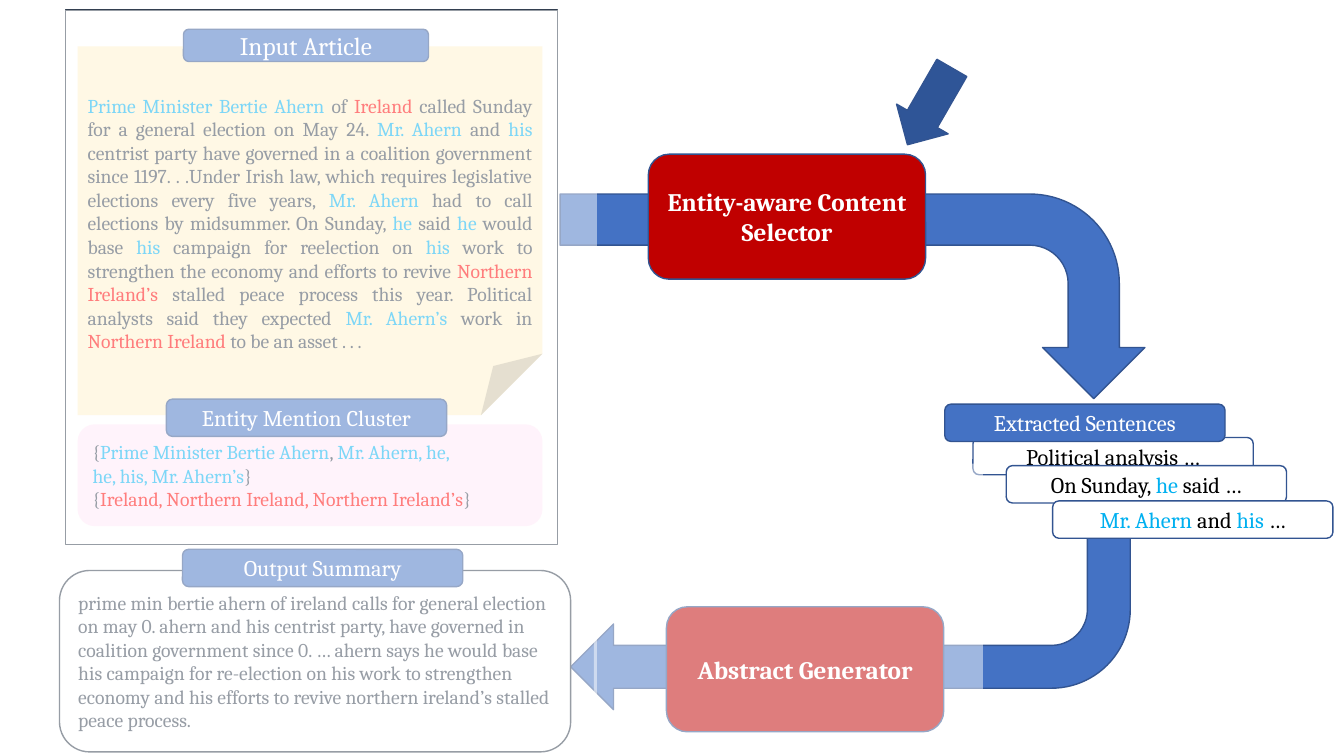
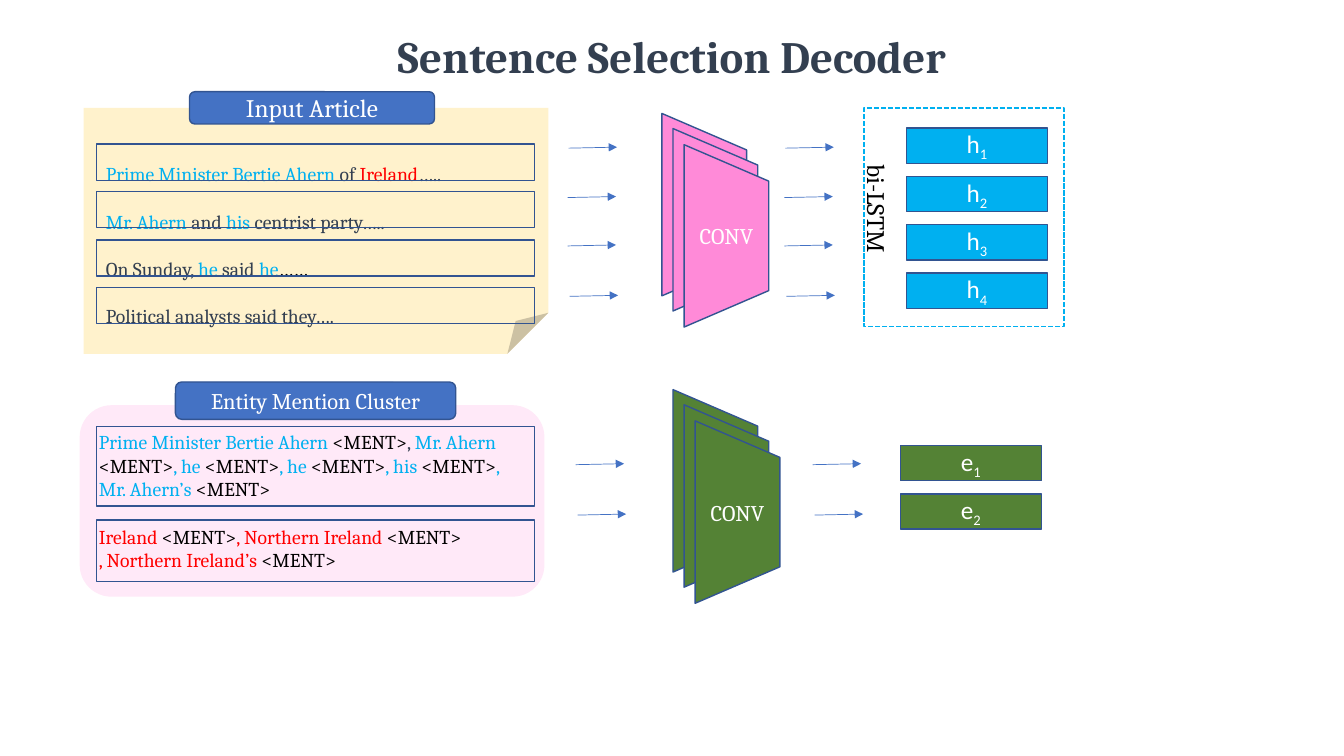
from dataclasses import dataclass, replace
from functools import partial
from typing import NamedTuple, Optional, Union

import pptx
import pptx.dml.color
import pptx.enum.dml
import pptx.enum.shapes
import pptx.enum.text
import pptx.oxml
import pptx.oxml.ns
import pptx.util
from lxml import etree

EMU_PER_PX = 9144  # 100 px to the inch

# Shared colours
WHITE, BLACK, SLATE = "FFFFFF", "000000", "333F50"
BLUE, OUTLINE, NAVY = "4472C4", "325491", "2F5597"
CYAN, RED, CRIMSON = "00B0F0", "FF0000", "C00000"
CREAM, BLUSH, PINK, GREEN = "FFF2CC", "FFE9F8", "FF8AD8", "548235"

KIND = pptx.enum.shapes.MSO_SHAPE
ALIGN = pptx.enum.text.PP_ALIGN
ANCHOR = pptx.enum.text.MSO_ANCHOR


class Box(NamedTuple):
    left: int
    top: int
    width: int
    height: int


class Run(NamedTuple):
    text: str
    color: Optional[str] = None
    baseline: int = 0


Words = tuple[Union[str, Run], ...]


@dataclass(frozen=True)
class TextStyle:
    size: int
    color: str = SLATE
    font: str = "Cambria"
    bold: bool = False
    align: ALIGN = ALIGN.LEFT
    anchor: ANCHOR = ANCHOR.MIDDLE
    gap: int = 0  # points before every paragraph but the first
    inset_left: int = 10
    inset_top: int = 5


@dataclass(frozen=True)
class Outline:
    color: str = OUTLINE
    width: float = 1
    dashed: bool = False


EDGE = Outline()
BODY = TextStyle(14)
LABEL = TextStyle(16, WHITE, align=ALIGN.CENTER)
ARTICLE_LABEL = replace(LABEL, size=18)
CARD = replace(LABEL, color=BLACK)
STAGE = replace(ARTICLE_LABEL, bold=True)
STATE = replace(ARTICLE_LABEL, font="Calibri")

# Mentions of the two entities, the tag that follows each, and a line break
person = partial(Run, color=CYAN)
place = partial(Run, color=RED)
MENT = Run("<MENT>", BLACK)
BREAK = "\n"


def px(length: int) -> pptx.util.Emu:
    return pptx.util.Emu(length * EMU_PER_PX)


def rgb(color: str) -> pptx.dml.color.RGBColor:
    return pptx.dml.color.RGBColor.from_string(color)


def write(frame, paragraphs: list[Words], style: TextStyle) -> None:
    frame.word_wrap = True
    frame.vertical_anchor = style.anchor
    frame.margin_left, frame.margin_top = px(style.inset_left), px(style.inset_top)
    for index, words in enumerate(paragraphs):
        paragraph = frame.add_paragraph() if index else frame.paragraphs[0]
        paragraph.alignment = style.align
        if index and style.gap:
            paragraph.space_before = pptx.util.Pt(style.gap)
        font = paragraph.font
        font.name, font.size = style.font, pptx.util.Pt(style.size)
        font.bold, font.color.rgb = style.bold, rgb(style.color)
        for word in words:
            if word == BREAK:
                paragraph.add_line_break()
                continue
            part = Run(word) if isinstance(word, str) else word
            run = paragraph.add_run()
            run.text = part.text
            if part.color:
                run.font.color.rgb = rgb(part.color)
            if part.baseline:
                run.font._element.set("baseline", str(part.baseline * 1000))


def draw(slide, kind: KIND, box: Box, fill: Optional[str] = None,
         outline: Optional[Outline] = EDGE, paragraphs: Optional[list[Words]] = None,
         style: TextStyle = BODY, rotation: int = 0):
    shape = slide.shapes.add_shape(kind, *map(px, box))
    shape.shadow.inherit = False
    shape.rotation = rotation
    if fill:
        shape.fill.solid()
        shape.fill.fore_color.rgb = rgb(fill)
    else:
        shape.fill.background()
    if outline:
        shape.line.color.rgb = rgb(outline.color)
        shape.line.width = pptx.util.Pt(outline.width)
        if outline.dashed:
            shape.line.dash_style = pptx.enum.dml.MSO_LINE.SQUARE_DOT
    else:
        shape.line.fill.background()
    if paragraphs:
        write(shape.text_frame, paragraphs, style)
    return shape


def text_box(slide, box: Box, text: str, style: TextStyle, rotation: int = 0) -> None:
    shape = slide.shapes.add_textbox(*map(px, box))
    shape.rotation = rotation
    write(shape.text_frame, [(text,)], style)


# Parts that both slides use
def article_label(slide, left: int, top: int) -> None:
    draw(slide, KIND.ROUNDED_RECTANGLE, Box(left, top, 243, 32), BLUE,
         paragraphs=[("Input Article",)], style=ARTICLE_LABEL)


def strip(slide, left: int, top: int, words: Words, fill: str = BLUE,
          style: TextStyle = LABEL) -> None:
    draw(slide, KIND.ROUNDED_RECTANGLE, Box(left, top, 278, 37), fill,
         paragraphs=[words], style=style)


def sheet(slide, box: Box, paragraphs: list[Words], style: TextStyle) -> None:
    draw(slide, KIND.FOLDED_CORNER, box, CREAM, None, paragraphs, style)


def cluster(slide, box: Box, label_left: int, label_top: int, paragraphs: list[Words],
            style: TextStyle = BODY) -> None:
    draw(slide, KIND.ROUNDED_RECTANGLE, box, BLUSH, None, paragraphs, style)
    strip(slide, label_left, label_top, ("Entity Mention Cluster",))


# Parts of the overview
def stage(slide, left: int, top: int, title: str) -> None:
    draw(slide, KIND.ROUNDED_RECTANGLE, Box(left, top, 275, 124), CRIMSON,
         paragraphs=[(title,)], style=STAGE)


def veil(slide, box: Box) -> None:
    shape = draw(slide, KIND.RECTANGLE, box, WHITE, None)
    color = shape._element.spPr.find(".//" + pptx.oxml.ns.qn("a:srgbClr"))
    etree.SubElement(color, pptx.oxml.ns.qn("a:alpha"), val="49000")


# Parts of the decoder
def conv_stack(slide, left: int, top: int, fill: str) -> None:
    for step, drop in enumerate((0, 15, 31)):
        layer = draw(slide, KIND.FLOWCHART_MANUAL_OPERATION,
                     Box(left + 11 * step, top + drop, 181, 84), fill, rotation=270)
    write(layer.text_frame, [("CONV",)], LABEL)
    layer.text_frame._txBody.bodyPr.set("vert", "vert")


def states(slide, left: int, top: int, letter: str, count: int, fill: str) -> None:
    for index in range(count):
        draw(slide, KIND.RECTANGLE, Box(left, top + 48 * index, 140, 35), fill,
             paragraphs=[(letter, Run(str(index + 1), baseline=-25))], style=STATE)


def flow_arrows(slide, left: int, rows: tuple[tuple[int, int], ...]) -> None:
    for shift, y in rows:
        start = left + shift
        arrow = slide.shapes.add_connector(pptx.enum.shapes.MSO_CONNECTOR.STRAIGHT,
                                           px(start), px(y), px(start + 48), px(y - 1))
        arrow.line.color.rgb = rgb(BLUE)
        arrow.line.width = pptx.util.Pt(0.5)
        qn = pptx.oxml.ns.qn
        etree.SubElement(arrow.line._get_or_add_ln(), qn("a:tailEnd"), type="triangle")
        etree.SubElement(arrow._element.spPr, qn("a:effectLst"))


ARTICLE: Words = (
    person("Prime Minister Bertie Ahern "), "of ", place("Ireland"),
    " called Sunday for a general election on May 24. ", person("Mr. Ahern "), "and ",
    person("his"), " centrist party have governed in a coalition government since 1197. . ."
    "Under Irish law, which requires legislative elections every five years, ",
    person("Mr. Ahern "), "had to call elections by midsummer. On Sunday, ", person("he"),
    " said ", person("he"), " would base ", person("his"), " campaign for reelection on ",
    person("his"), " work to strengthen the economy and efforts to revive ",
    place("Northern Ireland’s "),
    "stalled peace process this year. Political analysts said they expected ",
    person("Mr. Ahern’s"), " work in ", place("Northern Ireland"), " to be an asset . . .")

SUMMARY = (
    "prime min bertie ahern of ireland calls for general election on may 0. ahern and his "
    "centrist party, have governed in coalition government since 0. … ahern says he would "
    "base his campaign for re-election on his work to strengthen economy and his efforts to "
    "revive northern ireland’s stalled peace process.")


def overview(slide) -> None:
    # Bent arrows behind the stages
    lower = draw(slide, KIND.BENT_ARROW, Box(566, 534, 555, 170), BLUE, rotation=180)
    lower.adjustments[3] = 0.46
    draw(slide, KIND.BENT_ARROW, Box(744, 4, 203, 580), BLUE, rotation=90)
    strip(slide, 965, 434, ("Political analysis …",), WHITE, CARD)

    # Input
    sheet(slide, Box(77, 46, 461, 366), [ARTICLE],
          replace(BODY, align=ALIGN.JUSTIFY, anchor=ANCHOR.TOP, inset_top=47))
    article_label(slide, 182, 29)
    cluster(slide, Box(77, 421, 461, 101), 165, 396, [
        ("{", person("Prime Minister Bertie Ahern"), ", ", person("Mr. Ahern, he,")),
        (person("he, his, Mr. Ahern’s"), "}"),
        ("{", place("Ireland, Northern Ireland, Northern Ireland’s"), "}")])
    draw(slide, KIND.RECTANGLE, Box(65, 10, 488, 530), outline=Outline(SLATE))

    # Output
    draw(slide, KIND.ROUNDED_RECTANGLE, Box(59, 566, 507, 180), WHITE, Outline(SLATE),
         [(SUMMARY,)])
    strip(slide, 181, 545, ("Output Summary",))

    # Stages and the sentences passed between them
    stage(slide, 643, 153, "Entity-aware Content Selector")
    stage(slide, 661, 602, "Abstract Generator")
    strip(slide, 937, 401, ("Extracted Sentences",))
    strip(slide, 998, 462, ("On Sunday, ", person("he"), " said …"), WHITE, CARD)
    strip(slide, 1044, 497, (person("Mr. Ahern "), "and ", person("his"), " …"), WHITE, CARD)

    # Fade all but the selector, and point at it
    veil(slide, Box(33, 10, 559, 737))
    veil(slide, Box(589, 460, 386, 288))
    pointer = draw(slide, KIND.RIGHT_ARROW, Box(878, 76, 88, 59), NAVY, rotation=120)
    pointer.adjustments[0] = 0.58


def decoder(slide) -> None:
    text_box(slide, Box(325, 24, 683, 64), "Sentence Selection Decoder",
             TextStyle(32, bold=True, align=ALIGN.CENTER, anchor=ANCHOR.TOP))
    draw(slide, KIND.RECTANGLE, Box(857, 107, 198, 217), outline=Outline(CYAN, 1.25, True))

    # Sentences of the article
    sheet(slide, Box(83, 107, 461, 244), [
        (person("Prime Minister Bertie Ahern "), "of ", place("Ireland"), "….."),
        (person("Mr. Ahern "), "and ", person("his"), " centrist party….."),
        ("On Sunday, ", person("he"), " said ", person("he"), Run("……", BLACK)),
        ("Political analysts said they….",),
    ], replace(BODY, anchor=ANCHOR.TOP, gap=17, inset_left=22, inset_top=54))
    article_label(slide, 188, 91)
    for row in range(4):
        draw(slide, KIND.RECTANGLE, Box(96, 143 + 95 * row // 2, 434, 36))

    # Sentence encoder
    conv_stack(slide, 608, 161, PINK)
    states(slide, 899, 127, "h", 4, CYAN)
    text_box(slide, Box(805, 198, 130, 40), "bi-LSTM",
             TextStyle(18, BLACK, anchor=ANCHOR.TOP), rotation=90)
    for left in (563, 778):
        flow_arrows(slide, left, ((1, 147), (0, 196), (0, 244), (2, 294)))

    # Mentions of each entity
    cluster(slide, Box(79, 402, 461, 190), 174, 379, [
        (person("Prime Minister Bertie Ahern "), MENT, ", ", person("Mr. Ahern "), MENT,
         person(", he "), MENT, person(", he "), MENT, person(", his "), MENT,
         person(", Mr. Ahern’s "), MENT),
        (place("Ireland "), MENT, place(", Northern Ireland "), MENT, BREAK,
         place(", Northern Ireland’s "), MENT),
    ], replace(BODY, gap=17))
    for top, height in ((423, 79), (516, 61)):
        draw(slide, KIND.RECTANGLE, Box(96, top, 434, height))

    # Entity encoder
    conv_stack(slide, 619, 435, GREEN)
    states(slide, 893, 442, "e", 2, GREEN)
    for left in (571, 806):
        flow_arrows(slide, left, ((0, 461), (2, 511)))


def main() -> None:
    deck = pptx.Presentation()
    deck.slide_width, deck.slide_height = px(1333), px(750)
    for build in (overview, decoder):
        build(deck.slides.add_slide(deck.slide_layouts[6]))
    deck.save("out.pptx")


if __name__ == "__main__":
    main()
